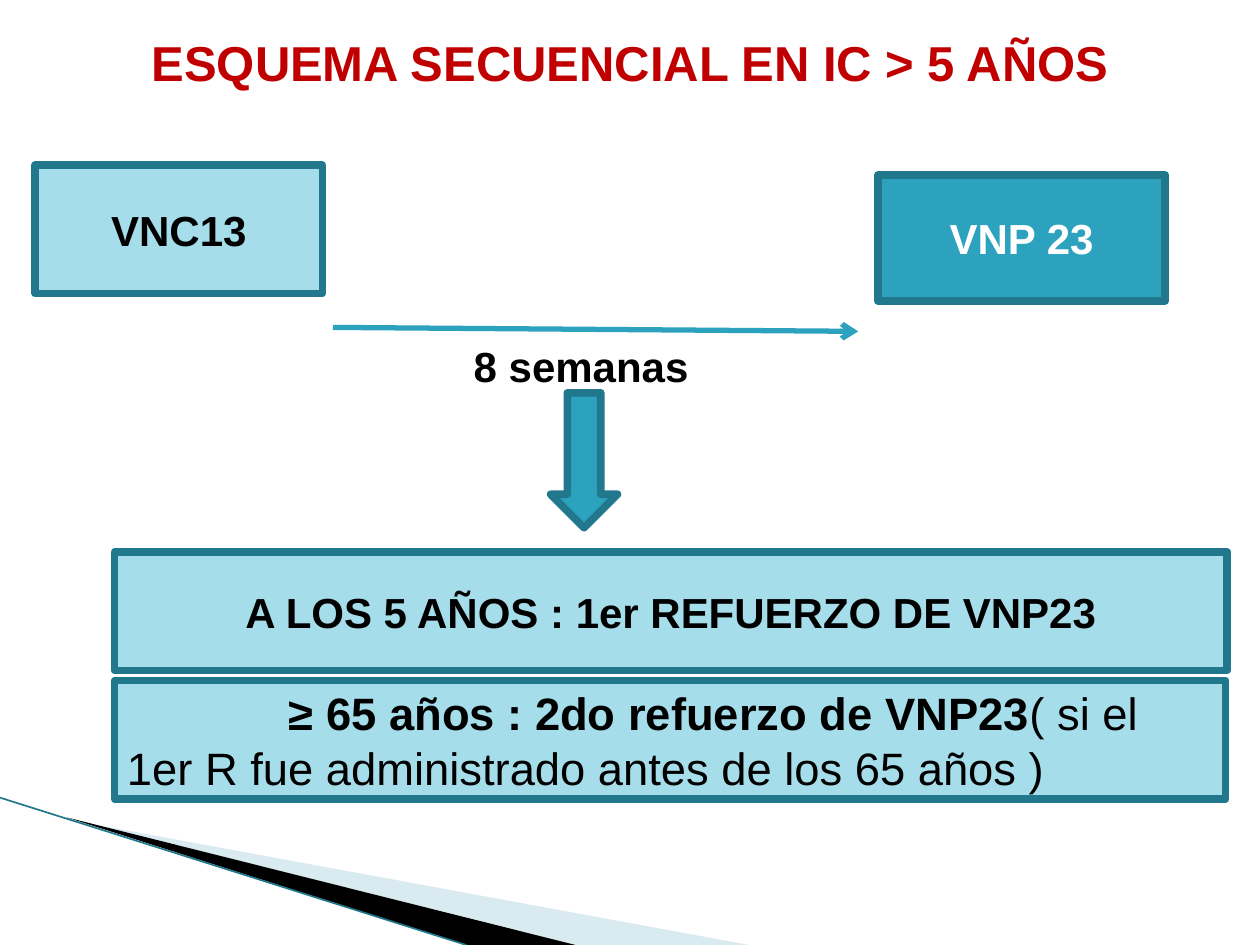
"""Build the slide with the sequential vaccination scheme."""
from dataclasses import dataclass

from lxml import etree
from pptx import Presentation
from pptx.dml.color import RGBColor
from pptx.enum.shapes import MSO_CONNECTOR, MSO_SHAPE
from pptx.enum.text import MSO_ANCHOR, MSO_AUTO_SIZE, PP_ALIGN
from pptx.oxml.ns import qn
from pptx.util import Cm, Pt

RECT, DOWN_ARROW = MSO_SHAPE.RECTANGLE, MSO_SHAPE.DOWN_ARROW
STRAIGHT = MSO_CONNECTOR.STRAIGHT
CENTER, LEFT = PP_ALIGN.CENTER, PP_ALIGN.LEFT
MIDDLE, TOP = MSO_ANCHOR.MIDDLE, MSO_ANCHOR.TOP
NO_FIT = MSO_AUTO_SIZE.NONE

COLORS = {
    "title": "C00000",
    "text": "000000",
    "light": "A6DDEA",
    "teal": "2DA2BF",
    "edge": "21788D",
    "white": "FFFFFF",
    "pale": "A0CBDC",
    "black": "000000",
}


@dataclass
class Run:
    text: str
    color: str = "text"
    size: float = 24
    bold: bool = True


@dataclass
class Block:
    """A filled preset shape; lengths in centimetres."""
    box: tuple[float, float, float, float]
    fill: str
    runs: tuple[Run, ...] = ()
    align: PP_ALIGN = CENTER
    indent: float = 0
    kind: MSO_SHAPE = RECT


@dataclass
class Wedge:
    """A filled triangle; points in centimetres."""
    points: tuple[tuple[float, float], ...]
    fill: str
    alpha: int = 100


BLOCKS = (
    Block((0.71, 3.33, 5.79, 2.59), "light", (Run("VNC13"),)),
    Block((17.7, 3.53, 5.79, 2.54), "teal", (Run("VNP 23", "white"),)),
    Block((11.1, 7.92, 1.35, 2.72), "teal", kind=DOWN_ARROW),
    Block((2.31, 11.13, 22.43, 2.39), "light",
          (Run("A LOS 5 AÑOS : 1er REFUERZO DE VNP23"),)),
    Block((2.31, 13.72, 22.4, 2.39), "light",
          (Run("≥ 65 años : 2do refuerzo de VNP23", size=25.9),
           Run("( si el 1er R fue administrado antes de los 65 años )",
               size=25.9, bold=False)),
          align=LEFT, indent=3.26),
)

WEDGES = (
    Wedge(((1.4, 16.53), (15.1, 19.05), (11.58, 19.05)), "pale", 40),
    Wedge(((1.35, 16.48), (11.6, 19.05), (9.4, 19.05)), "black"),
)


def rgb(name: str) -> RGBColor:
    """Return the named colour."""
    return RGBColor.from_string(COLORS[name])


def write(s, runs: tuple[Run, ...], align: PP_ALIGN, anchor: MSO_ANCHOR,
          indent: float = 0) -> None:
    """Fill a shape with one paragraph of formatted runs."""
    tf = s.text_frame
    frame = {"word_wrap": True, "auto_size": NO_FIT, "vertical_anchor": anchor}
    for name, value in frame.items():
        setattr(tf, name, value)
    p = tf.paragraphs[0]
    p.alignment = align
    if indent:
        p._p.get_or_add_pPr().set("indent", str(Cm(indent)))
    for run in runs:
        r = p.add_run()
        r.text = run.text
        font = {"name": "Arial", "size": Pt(run.size), "bold": run.bold}
        for name, value in font.items():
            setattr(r.font, name, value)
        r.font.color.rgb = rgb(run.color)


def draw_block(slide, block: Block) -> None:
    """Draw one outlined shape with its text."""
    s = slide.shapes.add_shape(block.kind, *map(Cm, block.box))
    s.shadow.inherit = False
    s.fill.solid()
    s.fill.fore_color.rgb = rgb(block.fill)
    s.line.color.rgb = rgb("edge")
    s.line.width = Pt(4.33)
    if block.runs:
        write(s, block.runs, block.align, MIDDLE, block.indent)


def draw_wedge(slide, wedge: Wedge) -> None:
    """Draw one corner triangle."""
    start, *rest = [(Cm(x), Cm(y)) for x, y in wedge.points]
    builder = slide.shapes.build_freeform(*start)
    builder.add_line_segments(rest)
    s = builder.convert_to_shape()
    s.shadow.inherit = False
    s.fill.solid()
    s.fill.fore_color.rgb = rgb(wedge.fill)
    s.line.fill.background()
    if wedge.alpha < 100:
        color = s._element.spPr.find(f".//{qn('a:srgbClr')}")
        etree.SubElement(color, qn("a:alpha"), val=str(wedge.alpha * 1000))


def draw_line(slide, ends: tuple[float, float, float, float], color: str,
              width: float, arrow: bool = False) -> None:
    """Draw a straight line, with an arrowhead if asked."""
    s = slide.shapes.add_connector(STRAIGHT, *map(Cm, ends))
    s.line.color.rgb = rgb(color)
    s.line.width = Pt(width)
    if arrow:
        etree.SubElement(s.line._get_or_add_ln(), qn("a:tailEnd"), type="arrow")
    etree.SubElement(s._element.spPr, qn("a:effectLst"))


def main() -> None:
    """Build and save the slide."""
    prs = Presentation()
    prs.slide_width, prs.slide_height = Cm(25.4), Cm(19.05)
    slide = prs.slides.add_slide(prs.slide_layouts[5])

    title = slide.shapes.title
    place = {"left": 0, "top": 0.53, "width": 25.4, "height": 1.45}
    for name, value in place.items():
        setattr(title, name, Cm(value))
    heading = Run("ESQUEMA SECUENCIAL EN IC > 5 AÑOS", "title", 28)
    write(title, (heading,), CENTER, TOP)

    for wedge in WEDGES:
        draw_wedge(slide, wedge)
    draw_line(slide, (0, 16.08, 9.4, 19.05), "edge", 0.95)
    draw_line(slide, (6.71, 6.6, 17.3, 6.68), "teal", 3, arrow=True)

    label = slide.shapes.add_textbox(*map(Cm, (9.3, 6.73, 4.95, 1.27)))
    write(label, (Run("8 semanas"),), LEFT, TOP)
    for block in BLOCKS:
        draw_block(slide, block)

    prs.save("out.pptx")


if __name__ == "__main__":
    main()
